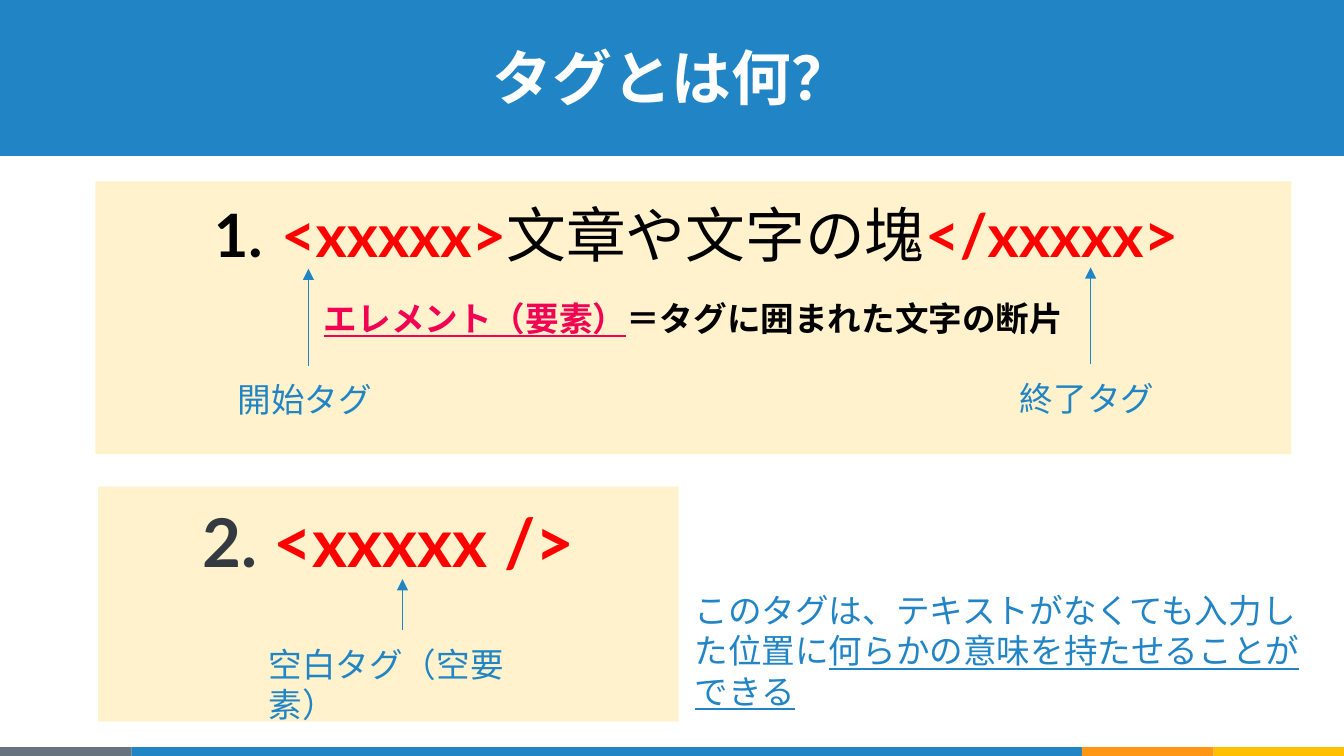
"""Build the slide that explains start, end and empty tags."""
import pptx
import pptx.util
import pptx.dml.color
import pptx.enum.shapes
import pptx.enum.text
import pptx.oxml.ns
from lxml import etree

RGB = pptx.dml.color.RGBColor
BLUE = RGB(0x21, 0x85, 0xC5)
ORANGE = RGB(0xFF, 0x97, 0x15)
AMBER = RGB(0xFF, 0xC0, 0x00)
GRAY = RGB(0x67, 0x74, 0x80)
CREAM = RGB(0xFF, 0xF2, 0xCC)
PINK = RGB(0xF2, 0x02, 0x53)
RED = RGB(0xFF, 0x00, 0x00)
DARK = RGB(0x34, 0x3A, 0x40)
BLACK = RGB(0x00, 0x00, 0x00)
WHITE = RGB(0xFF, 0xFF, 0xFF)
PX = 9144
ALIGN = pptx.enum.text.PP_ALIGN
ANCHOR = pptx.enum.text.MSO_ANCHOR
qn = pptx.oxml.ns.qn


def add_rect(box, color):
    sp = s.shapes.add_shape(pptx.enum.shapes.MSO_SHAPE.RECTANGLE, *[v * PX for v in box])
    sp.shadow.inherit = False
    sp.fill.solid()
    sp.fill.fore_color.rgb = color
    sp.line.fill.background()
    return sp


def write(sp, size, runs, align=ALIGN.LEFT, anchor=ANCHOR.TOP):
    tf = sp.text_frame
    frame = {"word_wrap": True, "auto_size": pptx.enum.text.MSO_AUTO_SIZE.NONE, "vertical_anchor": anchor}
    for side in ("left", "top", "right", "bottom"):
        frame["margin_" + side] = 10 * PX
    for name, value in frame.items():
        setattr(tf, name, value)
    p = tf.paragraphs[0]
    p.alignment = align
    for text, color, bold, underline in runs:
        r = p.add_run()
        r.text = text
        font = {"name": "Lato", "size": pptx.util.Pt(size), "bold": bold, "underline": underline}
        for name, value in font.items():
            setattr(r.font, name, value)
        r.font.color.rgb = color
    return p


prs = pptx.Presentation()
prs.slide_width, prs.slide_height = 1000 * PX, 5625 * PX // 10
s = prs.slides.add_slide(prs.slide_layouts[5])

add_rect((0, 0, 1000, 116), BLUE)
left = 0
for width, color in ((98, GRAY), (707, BLUE), (98, ORANGE), (97, AMBER)):
    add_rect((left, 556, width, 8), color)
    left += width

sp = add_rect((71, 135, 890, 203), CREAM)
write(sp, 18, [("エレメント（要素）", PINK, True, True), ("＝タグに囲まれた文字の断片", BLACK, True, False)],
      ALIGN.CENTER, ANCHOR.MIDDLE)

title = s.shapes.title
title.left, title.top, title.width, title.height = [v * PX for v in (50, 20, 900, 96)]
write(title, 32, [("タグとは何？", WHITE, True, False)], ALIGN.CENTER)
s.shapes._spTree.append(title._element)

sp = s.shapes.add_textbox(*[v * PX for v in (86, 137, 864, 371)])
p = write(sp, 32, [("<xxxxx>", RED, True, False), ("文章や文字の塊", BLACK, False, False),
                   ("</xxxxx>", RED, True, False)], ALIGN.CENTER)
pPr = p._p.get_or_add_pPr()
pPr.set("marL", str(50 * PX))
pPr.set("indent", str(-50 * PX))
buClr = etree.SubElement(pPr, qn("a:buClr"))
etree.SubElement(buClr, qn("a:srgbClr")).set("val", str(BLACK))
etree.SubElement(pPr, qn("a:buFont")).set("typeface", "Lato")
etree.SubElement(pPr, qn("a:buAutoNum")).set("type", "arabicPeriod")

sp = add_rect((73, 362, 432, 175), CREAM)
write(sp, 36, [("2. ", DARK, True, False), ("<xxxxx />", RED, True, False)], ALIGN.CENTER)

sp = s.shapes.add_textbox(*[v * PX for v in (507, 429, 470, 91)])
write(sp, 18, [("このタグは、テキストがなくても入力した位置に", BLUE, False, False),
               ("何らかの意味を持たせることができる", BLUE, False, True)])

for text, x, y, width, length in (("開始タグ", 167, 272, 125, 72),
                                  ("終了タグ", 749, 271, 125, 72),
                                  ("空白タグ（空要素）", 190, 469, 219, 38)):
    label = s.shapes.add_textbox(x * PX, y * PX, width * PX, 49 * PX)
    write(label, 18, [(text, BLUE, False, False)])
    center = x * PX + width * PX // 2
    arrow = s.shapes.add_connector(pptx.enum.shapes.MSO_CONNECTOR.STRAIGHT,
                                   center, y * PX, center, (y - length) * PX)
    arrow.begin_connect(label, 0)
    arrow.line.color.rgb = BLUE
    arrow.line.width = pptx.util.Pt(0.75)
    etree.SubElement(arrow.line._get_or_add_ln(), qn("a:tailEnd")).set("type", "triangle")
    etree.SubElement(arrow._element.spPr, qn("a:effectLst"))

prs.save("out.pptx")
